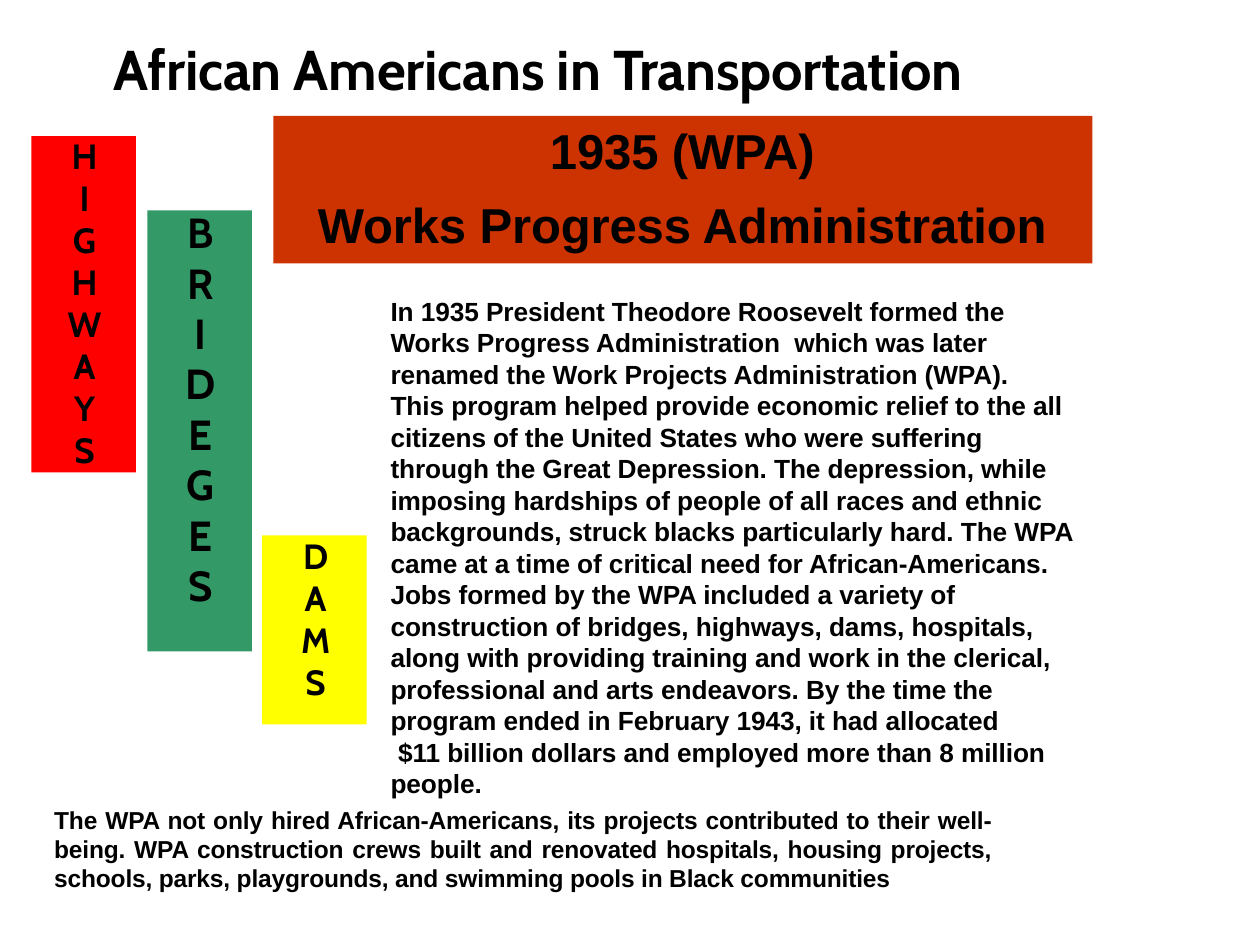
from pptx import Presentation
from pptx.dml.color import RGBColor
from pptx.enum.shapes import MSO_SHAPE as Shape
from pptx.enum.text import PP_ALIGN as Align
from pptx.util import Inches, Pt

BLACK = RGBColor(0x00, 0x00, 0x00)
RUST = RGBColor(0xCC, 0x33, 0x00)
GREEN = RGBColor(0x33, 0x99, 0x66)
RED = RGBColor(0xFF, 0x00, 0x00)
YELLOW = RGBColor(0xFF, 0xFF, 0x00)

HEADING = ["1935 (WPA)", "Works Progress Administration"]
STORY = [
    "In 1935 President Theodore Roosevelt formed the Works Progress "
    "Administration  which was later renamed the Work Projects "
    "Administration (WPA).\vThis program helped provide economic relief to "
    "the all citizens of the United States who were suffering through the "
    "Great Depression. The depression, while imposing hardships of people "
    "of all races and ethnic",
    "backgrounds, struck blacks particularly hard. The WPA came at a time "
    "of critical need for African-Americans. Jobs formed by the WPA "
    "included a variety of construction of bridges, highways, dams, "
    "hospitals, along with providing training and work in the clerical, "
    "professional and arts endeavors. By the time the program ended in "
    "February 1943, it had allocated",
    "$11 billion dollars and employed more than 8 million people.",
]
SUMMARY = (
    "The WPA not only hired African-Americans, its projects contributed to "
    "their well-being. WPA construction crews built and renovated "
    "hospitals, housing projects, schools, parks, playgrounds, and swimming "
    "pools in Black communities"
)


def add_panel(slide, left, top, width, height, color):
    panel = slide.shapes.add_shape(
        Shape.RECTANGLE, Inches(left), Inches(top), Inches(width), Inches(height))
    panel.shadow.inherit = False
    panel.fill.solid()
    panel.fill.fore_color.rgb = color
    panel.line.fill.background()


def add_text(slide, left, top, width, height, texts, size, font="Arial",
             align=Align.LEFT, margin=0.01, tracking=-0.1):
    box = slide.shapes.add_textbox(
        Inches(left), Inches(top), Inches(width), Inches(height))
    frame = box.text_frame
    frame.word_wrap = True
    frame.margin_left = frame.margin_right = 0
    frame.margin_top = frame.margin_bottom = 0
    for index, text in enumerate(texts):
        paragraph = frame.paragraphs[0] if index == 0 else frame.add_paragraph()
        paragraph.alignment = align
        properties = paragraph._p.get_or_add_pPr()
        properties.set("marL", str(Inches(margin)))
        properties.set("indent", "0")
        for part, line in enumerate(text.split("\v")):
            if part:
                paragraph.add_line_break()
            run = paragraph.add_run()
            run.text = line
            run.font.name = font
            run.font.size = Pt(size)
            run.font.bold = True
            run.font.color.rgb = BLACK
            run._r.get_or_add_rPr().set("spc", str(round(tracking * 100)))
    return frame.paragraphs


def add_stacked_word(slide, left, top, width, height, word, size):
    add_text(slide, left, top, width, height, [" ".join(word)], size,
             "Cabin", Align.CENTER)


def main():
    presentation = Presentation()
    presentation.slide_width = Inches(10)
    presentation.slide_height = Inches(7.5)
    slide = presentation.slides.add_slide(presentation.slide_layouts[6])

    add_panel(slide, 2.17, 0.92, 6.5, 1.17, RUST)
    heading = add_text(slide, 2.48, 0.96, 5.87, 1.05, HEADING, 28,
                       align=Align.CENTER, margin=0, tracking=-0.05)
    heading[1].space_before = Pt(8.4)

    add_panel(slide, 1.17, 1.67, 0.83, 3.5, GREEN)
    add_stacked_word(slide, 1.45, 1.64, 0.27, 3.2, "BRIDGES".replace("G", "EG"), 24)
    add_panel(slide, 0.25, 1.08, 0.83, 2.67, RED)
    add_stacked_word(slide, 0.52, 1.07, 0.29, 2.67, "HIGHWAYS", 20)

    add_text(slide, 0.51, 0.27, 8.97, 0.61,
             ["African Americans in Transportation"], 32, "Cabin",
             margin=0.39, tracking=-0.15)
    story = add_text(slide, 3.09, 2.34, 5.5, 4.01, STORY, 15, tracking=-0.05)
    story[-1]._p.get_or_add_pPr().set("indent", str(Inches(0.06)))
    summary = add_text(slide, 0.42, 6.39, 7.45, 0.7, [SUMMARY], 14,
                       align=Align.JUSTIFY)
    summary[0].line_spacing = Pt(16.7)

    add_panel(slide, 2.08, 4.25, 0.83, 1.5, YELLOW)
    add_stacked_word(slide, 2.37, 4.24, 0.26, 1.34, "DAMS", 20)

    presentation.save("out.pptx")


if __name__ == "__main__":
    main()
